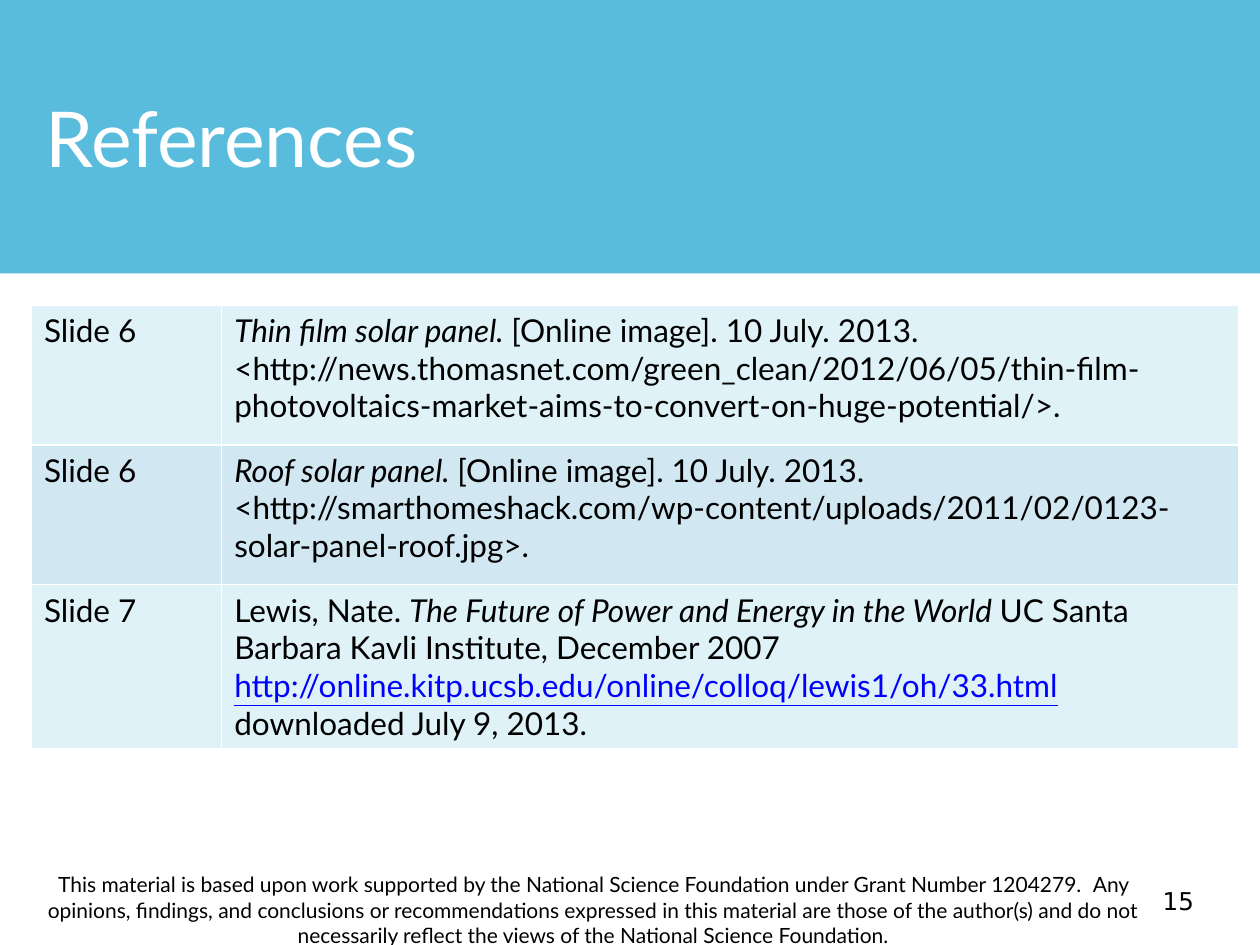
"""Build the references slide with its table, page number and funding note."""
from lxml import etree
from pptx import Presentation, util as u
from pptx.dml.color import RGBColor
from pptx.enum import text as t
from pptx.oxml.ns import qn

TITLE = "References"
PAGE = "15"
NOTE = (
    "This material is based upon work supported by the National Science Foundation "
    "under Grant Number 1204279.\u00a0 Any opinions, findings, and conclusions or "
    "recommendations expressed in this material are those of the author(s) and do not "
    "necessarily reflect the views of the National Science Foundation."
)
ITALIC = {"italic": True}
LINK = {"color": "0000FF", "underline": True}
ROWS = [
    ("Slide 6", [
        ("Thin film solar panel. ", ITALIC),
        ("[Online image]. 10 July. 2013. <http://news.thomasnet.com/green_clean/2012/06/05/"
         "thin-film-photovoltaics-market-aims-to-convert-on-huge-potential/>.", {}),
    ]),
    ("Slide 6", [
        ("Roof solar panel. ", ITALIC),
        ("[Online image]. 10 July. 2013. <http://smarthomeshack.com/wp-content/uploads/"
         "2011/02/0123-solar-panel-roof.jpg>.", {}),
    ]),
    ("Slide 7", [
        ("Lewis, Nate. ", {}),
        ("The Future of Power and Energy in the World ", ITALIC),
        ("UC Santa Barbara Kavli Institute, December 2007 ", {}),
        ("http://online.kitp.ucsb.edu/online/colloq/lewis1/oh/33.html ", LINK),
        ("downloaded July 9, 2013.", {}),
    ]),
]
BANDS = ["DEF2F8", "D1E7F2"]
COLS = [1.51, 8.07]
ROW_H = 1.11


def paint(fill, color):
    fill.solid()
    fill.fore_color.rgb = RGBColor.from_string(color)


def write(para, words, size=18, font="Lato", color="000000", italic=False, underline=False):
    run = para.add_run()
    run.text = words
    run.font.size = u.Pt(size)
    run.font.name = font
    run.font.italic = italic
    run.font.underline = underline
    paint(run.font.fill, color)


def place(shape, *box):
    shape.left, shape.top, shape.width, shape.height = map(u.Inches, box)


def edge(cell, color="FFFFFF", width=1):
    props = cell._tc.get_or_add_tcPr()
    for spot, side in enumerate(("lnL", "lnR", "lnT", "lnB")):
        line = etree.Element(qn("a:" + side), w=str(u.Pt(width)))
        fill = etree.SubElement(line, qn("a:solidFill"))
        etree.SubElement(fill, qn("a:srgbClr"), val=color)
        props.insert(spot, line)


def add_title(slide):
    title = slide.shapes.title
    place(title, 0, 0, 10, 2.17)
    paint(title.fill, "59BCDD")
    frame = title.text_frame
    frame.auto_size = t.MSO_AUTO_SIZE.NONE
    frame.vertical_anchor = t.MSO_ANCHOR.MIDDLE
    frame.margin_left = u.Inches(0.36)
    frame.paragraphs[0].alignment = t.PP_ALIGN.LEFT
    write(frame.paragraphs[0], TITLE, size=44, color="FFFFFF")


def add_refs(slide):
    box = map(u.Inches, (0.25, 2.42, sum(COLS), ROW_H * len(ROWS)))
    table = slide.shapes.add_table(len(ROWS), len(COLS), *box).table
    table.first_row = False
    for col, width in zip(table.columns, COLS):
        col.width = u.Inches(width)
    for i, (label, parts) in enumerate(ROWS):
        table.rows[i].height = u.Inches(ROW_H)
        for j, runs in enumerate(([(label, {})], parts)):
            cell = table.cell(i, j)
            paint(cell.fill, BANDS[i % 2])
            edge(cell)
            for words, style in runs:
                write(cell.text_frame.paragraphs[0], words, **style)


def add_text(slide, box, words, align, anchor, top=0.05, **style):
    shape = slide.shapes.add_textbox(*map(u.Inches, box))
    frame = shape.text_frame
    frame.word_wrap = True
    frame.vertical_anchor = anchor
    frame.margin_top = u.Inches(top)
    frame.paragraphs[0].alignment = align
    write(frame.paragraphs[0], words, **style)


def main():
    deck = Presentation()
    deck.slide_width, deck.slide_height = u.Inches(10), u.Inches(7.5)
    slide = deck.slides.add_slide(deck.slide_layouts[5])
    add_title(slide)
    add_refs(slide)
    add_text(slide, (9.13, 6.93, 0.5, 0.4), PAGE, t.PP_ALIGN.LEFT, t.MSO_ANCHOR.TOP,
             top=0.1, size=14, font="DejaVu Sans")
    add_text(slide, (0.17, 7.02, 9.08, 0.4), NOTE, t.PP_ALIGN.CENTER,
             t.MSO_ANCHOR.MIDDLE, size=12)
    deck.save("out.pptx")


if __name__ == "__main__":
    main()
